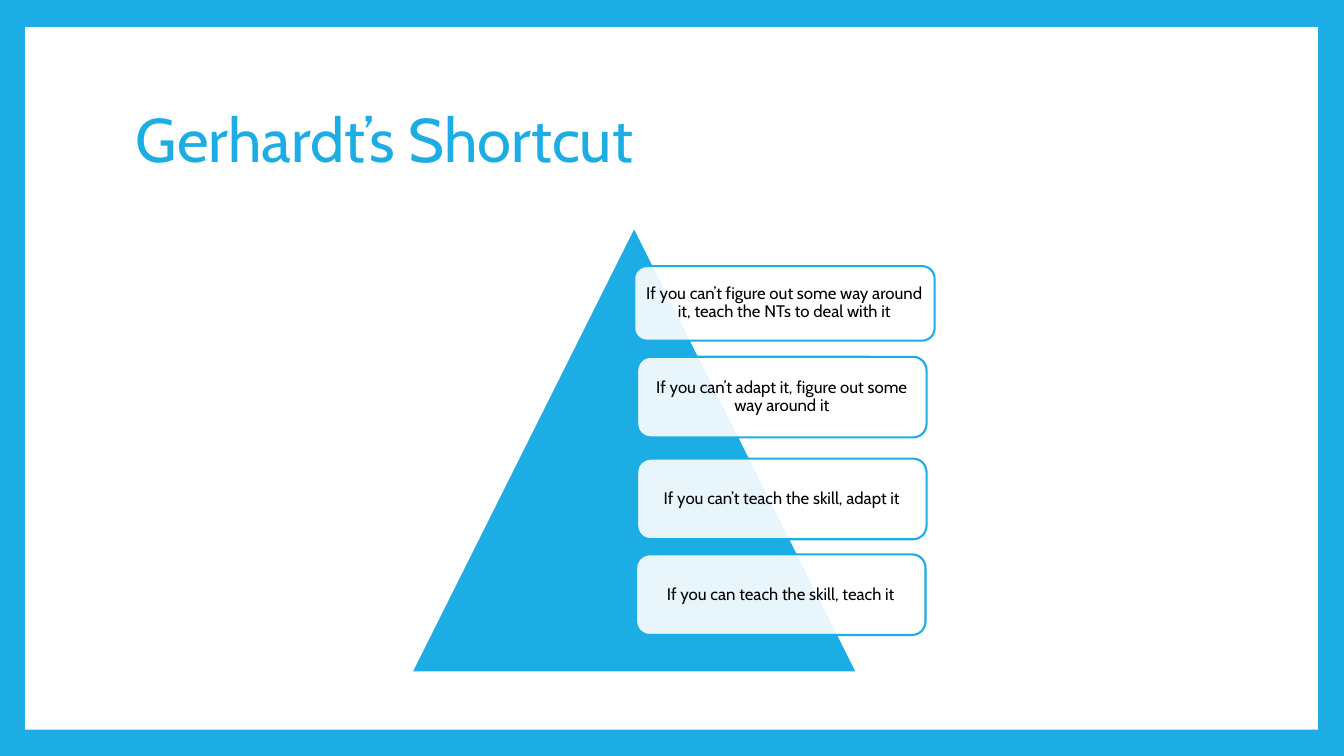
"""Build the Gerhardt's Shortcut pyramid slide."""
from dataclasses import dataclass

import lxml.etree
import pptx
import pptx.dml.color
import pptx.dml.fill
import pptx.enum.shapes
import pptx.enum.text
import pptx.oxml.ns
import pptx.shapes.autoshape
import pptx.slide
import pptx.text.text
import pptx.util

Inches = pptx.util.Inches
Pt = pptx.util.Pt
Shape = pptx.shapes.autoshape.Shape
Slide = pptx.slide.Slide
MSO_SHAPE = pptx.enum.shapes.MSO_SHAPE
PP_ALIGN = pptx.enum.text.PP_ALIGN

FONT = "Cabin"
BLUE = "1CADE4"
WHITE = "FFFFFF"
BLACK = "000000"


@dataclass
class Step:
    left: float
    top: float
    width: float
    height: float
    text: str


STEPS = [
    Step(6.31, 5.5, 2.87, 0.8, "If you can teach the skill, teach it"),
    Step(6.32, 4.55, 2.87, 0.8, "If you can’t teach the skill, adapt it"),
    Step(6.32, 3.54, 2.87, 0.8, "If you can’t adapt it, figure out some way around it"),
    Step(6.29, 2.64, 2.98, 0.74,
         "If you can’t figure out some way around it, teach the NTs to deal with it"),
]


def set_fill(fill: pptx.dml.fill.FillFormat, color: str) -> None:
    fill.solid()
    fill.fore_color.rgb = pptx.dml.color.RGBColor.from_string(color)


def set_opacity(sp: Shape, percent: int) -> None:
    clr = sp._element.spPr.find(pptx.oxml.ns.qn("a:solidFill"))[0]
    alpha = lxml.etree.SubElement(clr, pptx.oxml.ns.qn("a:alpha"))
    alpha.set("val", str(percent * 1000))


def add_shape(s: Slide, kind: MSO_SHAPE, left: float, top: float, width: float,
              height: float, fill: str, line: str | None = None) -> Shape:
    sp = s.shapes.add_shape(kind, Inches(left), Inches(top), Inches(width), Inches(height))
    sp.shadow.inherit = False
    set_fill(sp.fill, fill)
    if line is None:
        sp.line.fill.background()
    else:
        set_fill(sp.line.fill, line)
        sp.line.width = Pt(1.5)
    return sp


def write(tf: pptx.text.text.TextFrame, text: str, size: float, color: str,
          align: PP_ALIGN) -> None:
    tf.text = text
    tf.word_wrap = True
    tf.vertical_anchor = pptx.enum.text.MSO_ANCHOR.MIDDLE
    p = tf.paragraphs[0]
    p.alignment = align
    p.line_spacing = 0.9
    r = p.runs[0]
    r.font.name = FONT
    r.font.size = Pt(size)
    set_fill(r.font.fill, color)


def add_step(s: Slide, step: Step) -> None:
    sp = add_shape(s, MSO_SHAPE.ROUNDED_RECTANGLE, step.left, step.top,
                   step.width, step.height, WHITE, BLUE)
    set_opacity(sp, 90)
    tf = sp.text_frame
    tf.margin_left = tf.margin_right = tf.margin_top = tf.margin_bottom = Inches(0.05)
    write(tf, step.text, 12, BLACK, PP_ALIGN.CENTER)


def main() -> None:
    prs = pptx.Presentation()
    prs.slide_width, prs.slide_height = Inches(13.33), Inches(7.5)
    s = prs.slides.add_slide(prs.slide_layouts[6])
    set_fill(s.background.fill, BLUE)
    add_shape(s, MSO_SHAPE.RECTANGLE, 0.25, 0.27, 12.82, 6.97, WHITE)
    title = s.shapes.add_textbox(Inches(1.25), Inches(0.67), Inches(10.8), Inches(1.48))
    write(title.text_frame, "Gerhardt’s Shortcut", 44, BLUE, PP_ALIGN.LEFT)
    add_shape(s, MSO_SHAPE.ISOSCELES_TRIANGLE, 4.08, 2.25, 4.42, 4.42, BLUE, WHITE)
    for step in STEPS:
        add_step(s, step)
    prs.save("out.pptx")


if __name__ == "__main__":
    main()
